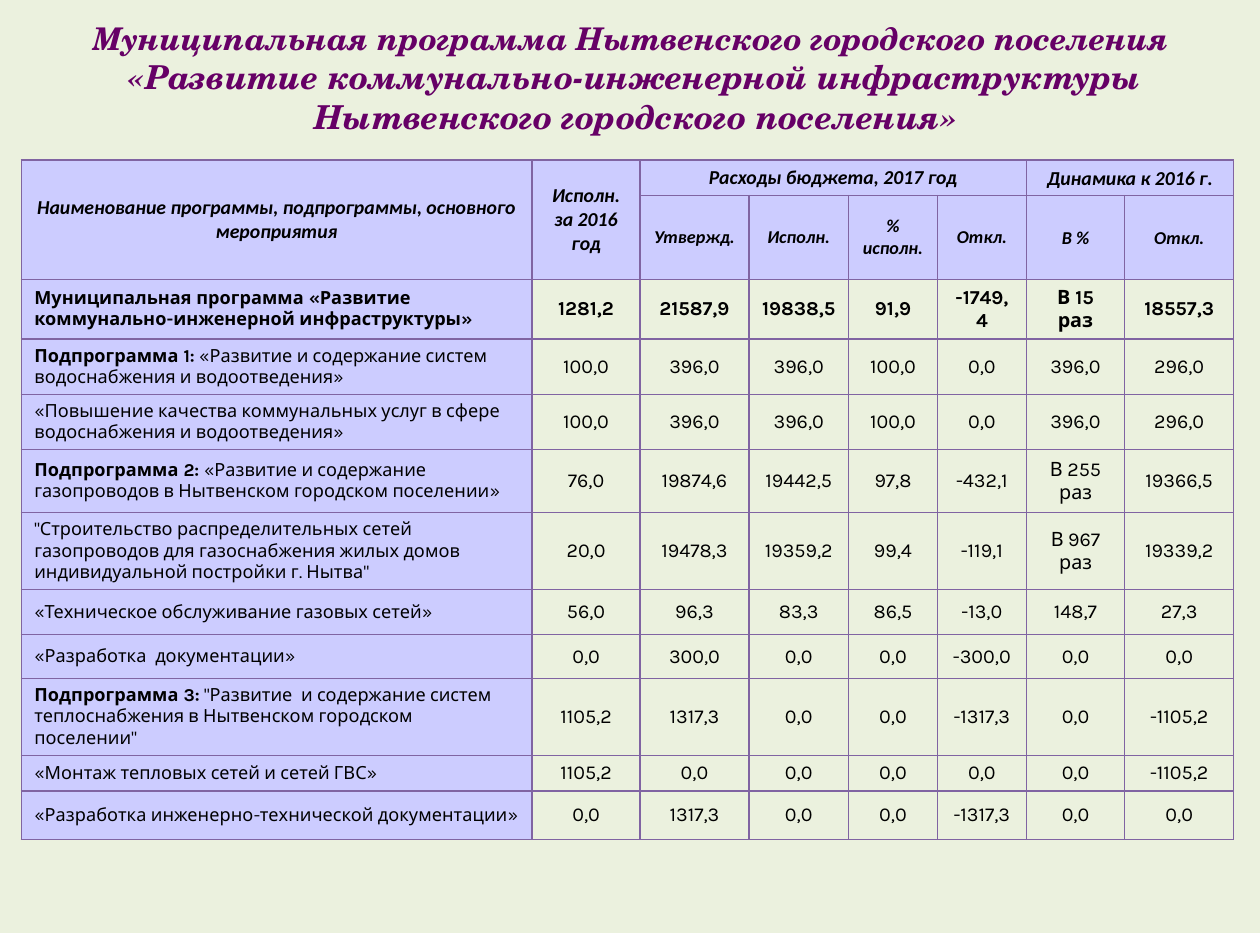
from lxml import etree
from pptx import Presentation
from pptx.dml.color import RGBColor
from pptx.enum.text import MSO_ANCHOR, PP_ALIGN
from pptx.oxml.ns import qn
from pptx.util import Emu, Inches, Pt

CENTER, LEFT = PP_ALIGN.CENTER, PP_ALIGN.LEFT
TOP, MIDDLE = MSO_ANCHOR.TOP, MSO_ANCHOR.MIDDLE
PALE = RGBColor(0xEB, 0xF1, 0xDE)
LILAC = RGBColor(0xCC, 0xCC, 0xFF)
VIOLET = RGBColor(0x80, 0x64, 0xA2)
PLUM = RGBColor(0x66, 0x00, 0x66)
BLACK = RGBColor(0x00, 0x00, 0x00)

TITLE = {"name": "TeX Gyre Schola", "size": Pt(20), "bold": True, "italic": True}
HEAD = {"name": "Calibri", "size": Pt(12), "bold": True, "italic": True}
SUBHEAD = {**HEAD, "size": Pt(11)}
NAME = {"name": "Karla", "size": Pt(11), "bold": False, "italic": False}
NUMBER = {**NAME, "size": Pt(12)}

COLUMNS = [4.31, 0.91, 0.92, 0.84, 0.75, 0.75, 0.83, 0.92]
ROWS = [0.3, 0.71, 0.5, 0.46, 0.46, 0.53, 0.65, 0.38, 0.37, 0.62, 0.3, 0.41]
WIDE_MARGINS = {"margin_left": 0.11, "margin_right": 0.11, "margin_top": 0.05, "margin_bottom": 0.05}
THIN_MARGINS = {"margin_left": 0.01, "margin_right": 0.01, "margin_top": 0.01, "margin_bottom": 0}

HEADINGS = [
    (0, 0, 1, 0, "Наименование программы, подпрограммы, основного мероприятия"),
    (0, 1, 1, 1, "Исполн. за 2016 год"),
    (0, 2, 0, 5, "Расходы бюджета, 2017 год"),
    (0, 6, 0, 7, "Динамика к 2016 г."),
]
SUBHEADINGS = ["Утвержд.", "Исполн.", "% исполн.", "Откл.", "В %", "Откл."]
PROGRAMMES = [
    ("Муниципальная программа «Развитие коммунально-инженерной инфраструктуры»", "",
     "1281,2|21587,9|19838,5|91,9|-1749,4|В 15 раз|18557,3"),
    ("Подпрограмма 1:", " «Развитие и содержание систем водоснабжения и водоотведения»",
     "100,0|396,0|396,0|100,0|0,0|396,0|296,0"),
    ("", "«Повышение качества коммунальных услуг в сфере водоснабжения и водоотведения»",
     "100,0|396,0|396,0|100,0|0,0|396,0|296,0"),
    ("Подпрограмма 2: ", "«Развитие и содержание газопроводов в Нытвенском городском поселении»",
     "76,0|19874,6|19442,5|97,8|-432,1|В 255 раз|19366,5"),
    ("", "\"Строительство распределительных сетей газопроводов для газоснабжения "
     "жилых домов индивидуальной постройки г. Нытва\"",
     "20,0|19478,3|19359,2|99,4|-119,1|В 967 раз|19339,2"),
    ("", "«Техническое обслуживание газовых сетей»",
     "56,0|96,3|83,3|86,5|-13,0|148,7|27,3"),
    ("", "«Разработка  документации»",
     "0,0|300,0|0,0|0,0|-300,0|0,0|0,0"),
    ("Подпрограмма 3:", " \"Развитие  и содержание систем теплоснабжения в Нытвенском городском поселении\"",
     "1105,2|1317,3|0,0|0,0|-1317,3|0,0|-1105,2"),
    ("", "«Монтаж тепловых сетей и сетей ГВС»",
     "1105,2|0,0|0,0|0,0|0,0|0,0|-1105,2"),
    ("", "«Разработка инженерно-технической документации»",
     "0,0|1317,3|0,0|0,0|-1317,3|0,0|0,0"),
]


def write(para, text, look, color=BLACK, align=CENTER):
    para.alignment = align
    span = para.add_run()
    span.text = text
    for key, value in look.items():
        setattr(span.font, key, value)
    span.font.color.rgb = color


def dress(cell, fill, margins):
    cell.vertical_anchor = MIDDLE
    for key, value in margins.items():
        setattr(cell, key, Inches(value))
    props = cell._tc.get_or_add_tcPr()
    for side in ("a:lnL", "a:lnR", "a:lnT", "a:lnB"):
        line = etree.SubElement(props, qn(side), w=str(Pt(1)))
        paint = etree.SubElement(line, qn("a:solidFill"))
        etree.SubElement(paint, qn("a:srgbClr"), val=str(VIOLET))
    cell.fill.solid()
    cell.fill.fore_color.rgb = fill


deck = Presentation()
deck.slide_width, deck.slide_height = Emu(9720263), Emu(7200900)
page = deck.slides.add_slide(deck.slide_layouts[6])
page.background.fill.solid()
page.background.fill.fore_color.rgb = PALE

box = page.shapes.add_textbox(Inches(0.4), Inches(0.1), Inches(9.92), Inches(1.11))
box.text_frame.word_wrap = True
box.text_frame.vertical_anchor = MIDDLE
para = box.text_frame.paragraphs[0]
write(para, "Муниципальная программа Нытвенского городского поселения ", {**TITLE, "size": Pt(19)}, PLUM)
para.add_line_break()
write(para, "«Развитие коммунально-инженерной инфраструктуры Нытвенского городского поселения»", TITLE, PLUM)

table = page.shapes.add_table(len(ROWS), len(COLUMNS), Inches(0.18), Inches(1.35),
                              Inches(sum(COLUMNS)), Inches(sum(ROWS))).table
table.first_row = table.horz_banding = False
for column, width in zip(table.columns, COLUMNS):
    column.width = Inches(width)
for row, height in zip(table.rows, ROWS):
    row.height = Inches(height)
for r in range(len(ROWS)):
    for c in range(len(COLUMNS)):
        dress(table.cell(r, c), LILAC if r < 2 or c == 0 else PALE,
              THIN_MARGINS if r < 2 and c > 5 else WIDE_MARGINS)

for top, left, bottom, right, text in HEADINGS:
    cell = table.cell(top, left)
    cell.merge(table.cell(bottom, right))
    write(cell.text_frame.paragraphs[0], text, HEAD)
table.cell(0, 2).vertical_anchor = TOP
for c, text in enumerate(SUBHEADINGS, 2):
    write(table.cell(1, c).text_frame.paragraphs[0], text, SUBHEAD)

for r, (strong, plain, numbers) in enumerate(PROGRAMMES, 2):
    para = table.cell(r, 0).text_frame.paragraphs[0]
    for text, bold in ((strong, True), (plain, False)):
        if text:
            write(para, text, {**NAME, "bold": bold}, align=LEFT)
    for c, number in enumerate(numbers.split("|"), 1):
        write(table.cell(r, c).text_frame.paragraphs[0], number, {**NUMBER, "bold": r == 2})

deck.save("out.pptx")
